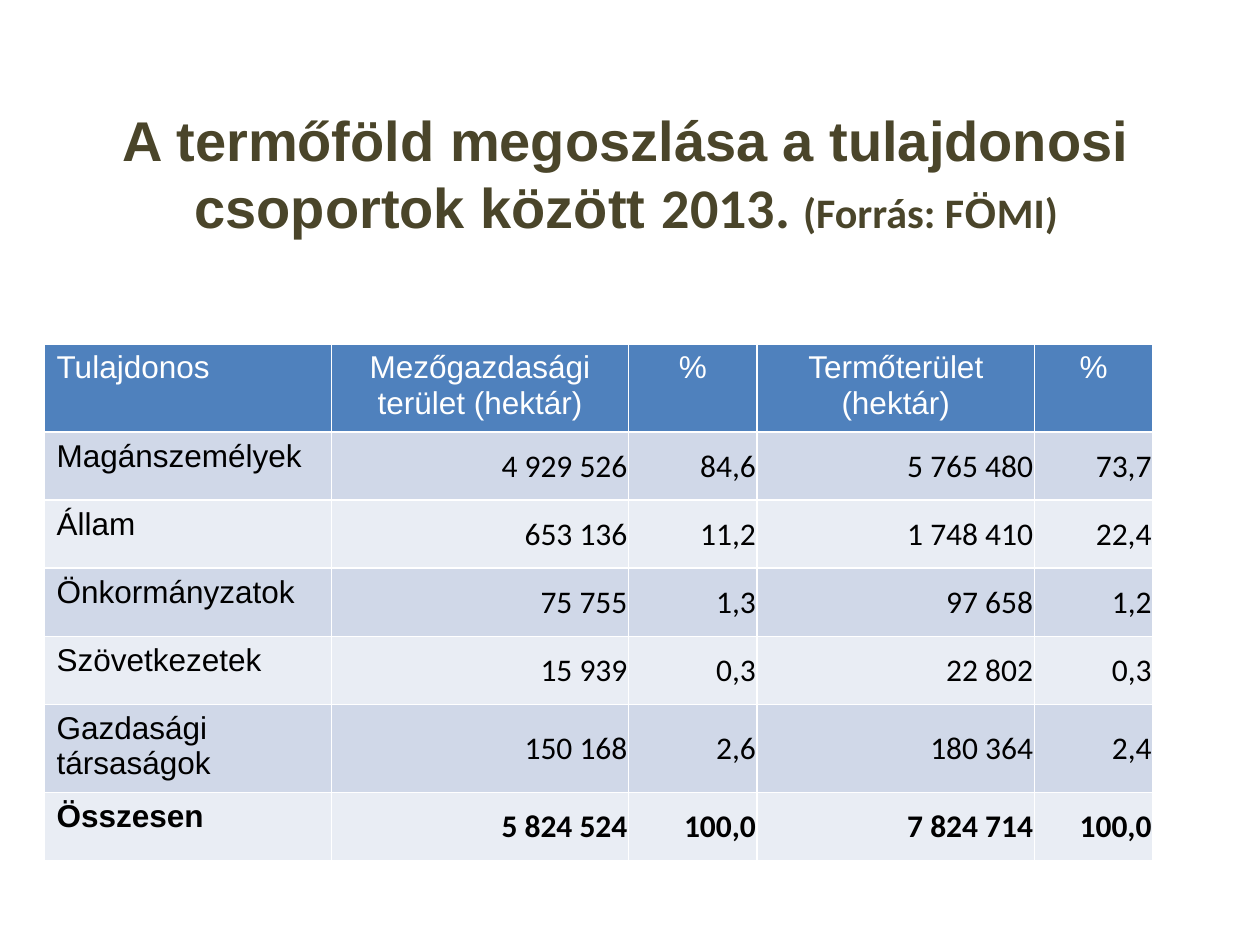
from pptx import Presentation
from pptx import util as u
from pptx.dml.color import RGBColor
from pptx.enum import text as t

PX = 9144  # EMU per px, 100 px to the inch
OLIVE, WHITE, BLACK = "4A452A", "FFFFFF", "000000"
HEADER_BLUE, BANDS = "4F81BD", ("D0D8E8", "E9EDF4")
LEFT, CENTER, RIGHT = t.PP_ALIGN.LEFT, t.PP_ALIGN.CENTER, t.PP_ALIGN.RIGHT

TITLE = [
    ("A termőföld megoszlása a tulajdonosi csoportok között ", "Arial", 32),
    ("2013. ", "Calibri", 32),
    ("(Forrás: F", "Calibri", 24),
    ("Ö", "Arial", 24),
    ("MI)", "Calibri", 24),
]
HEADINGS = ["Tulajdonos", "Mezőgazdasági\nterület (hektár)", "%",
            "Termőterület\n(hektár)", "%"]
OWNERS = [
    ["Magánszemélyek", "4 929 526", "84,6", "5 765 480", "73,7"],
    ["Állam", "653 136", "11,2", "1 748 410", "22,4"],
    ["Önkormányzatok", "75 755", "1,3", "97 658", "1,2"],
    ["Szövetkezetek", "15 939", "0,3", "22 802", "0,3"],
    ["Gazdasági társaságok", "150 168", "2,6", "180 364", "2,4"],
    ["Összesen", "5 824 524", "100,0", "7 824 714", "100,0"],
]
COLUMN_WIDTHS = [228, 236, 102, 220, 94]
ROW_HEIGHTS = [70, 54, 54, 54, 54, 70, 54]


def px(length):
    return u.Emu(length * PX)


def color(hex_code):
    return RGBColor.from_string(hex_code)


def write(paragraph, words, font="Arial", size=18, ink=BLACK, bold=False, align=LEFT):
    paragraph.alignment = align
    run = paragraph.add_run()
    run.text = words
    run.font.name = font
    run.font.size = u.Pt(size)
    run.font.bold = bold
    run.font.color.rgb = color(ink)


def set_margins(cell, left, top, right, bottom):
    cell.margin_left, cell.margin_top = px(left), px(top)
    cell.margin_right, cell.margin_bottom = px(right), px(bottom)


def add_title(slide, left, top, width, height):
    frame = slide.shapes.add_textbox(px(left), px(top), px(width), px(height)).text_frame
    frame.word_wrap = True
    frame.vertical_anchor = t.MSO_ANCHOR.MIDDLE
    for words, font, size in TITLE:
        write(frame.paragraphs[0], words, font=font, size=size, ink=OLIVE,
              bold=True, align=CENTER)


def fill_cell(cell, words, fill, **text_format):
    cell.fill.solid()
    cell.fill.fore_color.rgb = color(fill)
    for number, line in enumerate(words.split("\n")):
        frame = cell.text_frame
        paragraph = frame.add_paragraph() if number else frame.paragraphs[0]
        write(paragraph, line, **text_format)


def add_ownership_table(slide, left, top):
    rows = [HEADINGS] + OWNERS
    table = slide.shapes.add_table(
        len(rows), len(HEADINGS), px(left), px(top),
        px(sum(COLUMN_WIDTHS)), px(sum(ROW_HEIGHTS))).table
    for column, width in zip(table.columns, COLUMN_WIDTHS):
        column.width = px(width)
    for row, height in zip(table.rows, ROW_HEIGHTS):
        row.height = px(height)

    # Header row
    for c, heading in enumerate(HEADINGS):
        set_margins(table.cell(0, c), 10, 5, 10, 5)
        fill_cell(table.cell(0, c), heading, HEADER_BLUE, ink=WHITE,
                  align=CENTER if c else LEFT)

    # Owner names on the left, figures on the right, total in bold
    for r, owner in enumerate(OWNERS, start=1):
        band, is_total = BANDS[(r - 1) % 2], r == len(OWNERS)
        name_cell = table.cell(r, 0)
        set_margins(name_cell, 10, 5, 10, 5)
        fill_cell(name_cell, owner[0], band, bold=is_total)
        for c, figure in enumerate(owner[1:], start=1):
            cell = table.cell(r, c)
            set_margins(cell, 1, 1, 1, 0)
            cell.vertical_anchor = t.MSO_ANCHOR.MIDDLE
            fill_cell(cell, figure, band, font="Calibri", bold=is_total, align=RIGHT)


def main():
    deck = Presentation()
    deck.slide_width, deck.slide_height = px(1000), px(750)
    slide = deck.slides.add_slide(deck.slide_layouts[6])
    add_title(slide, 47, 70, 900, 134)
    add_ownership_table(slide, 35, 273)
    deck.save("out.pptx")


if __name__ == "__main__":
    main()
